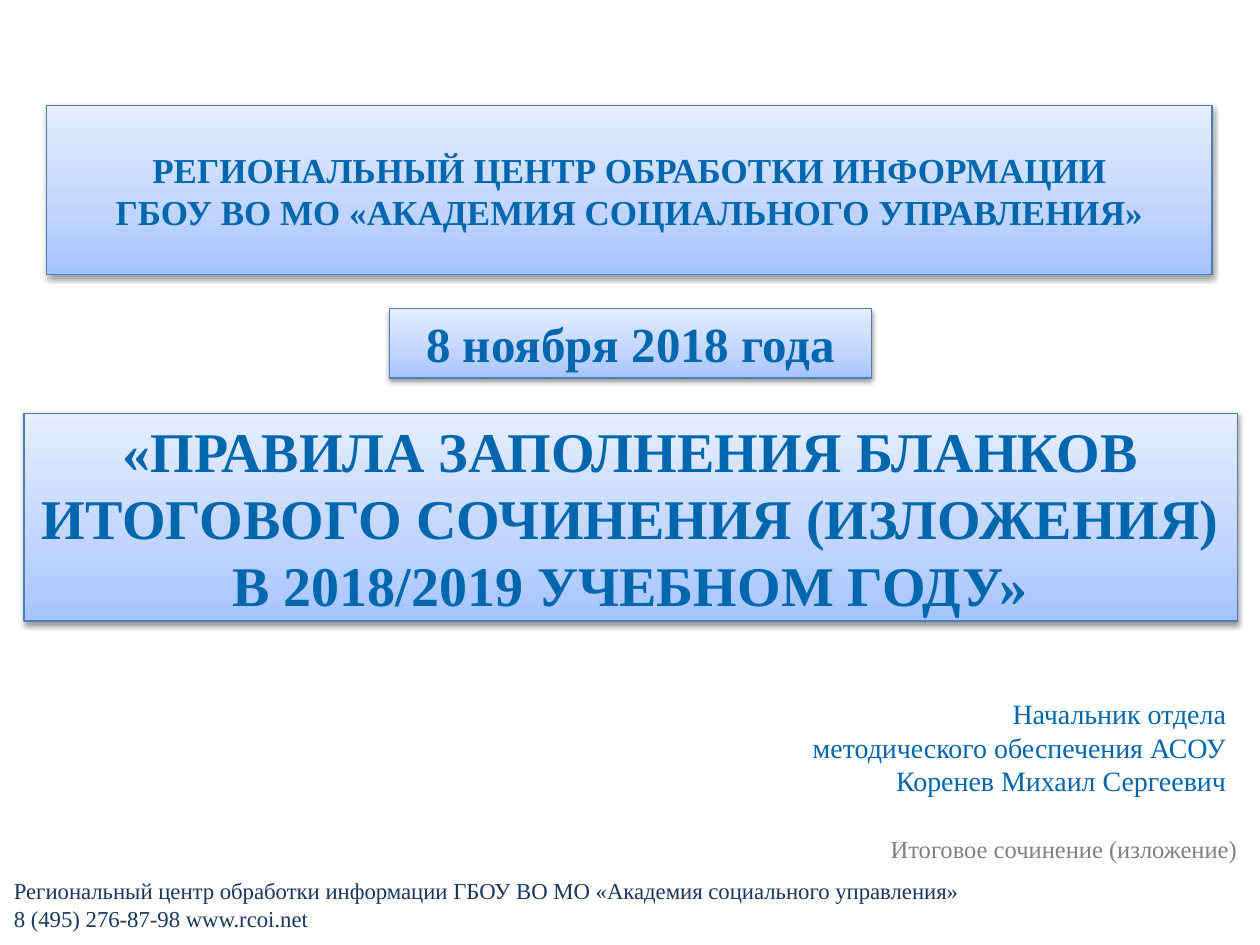
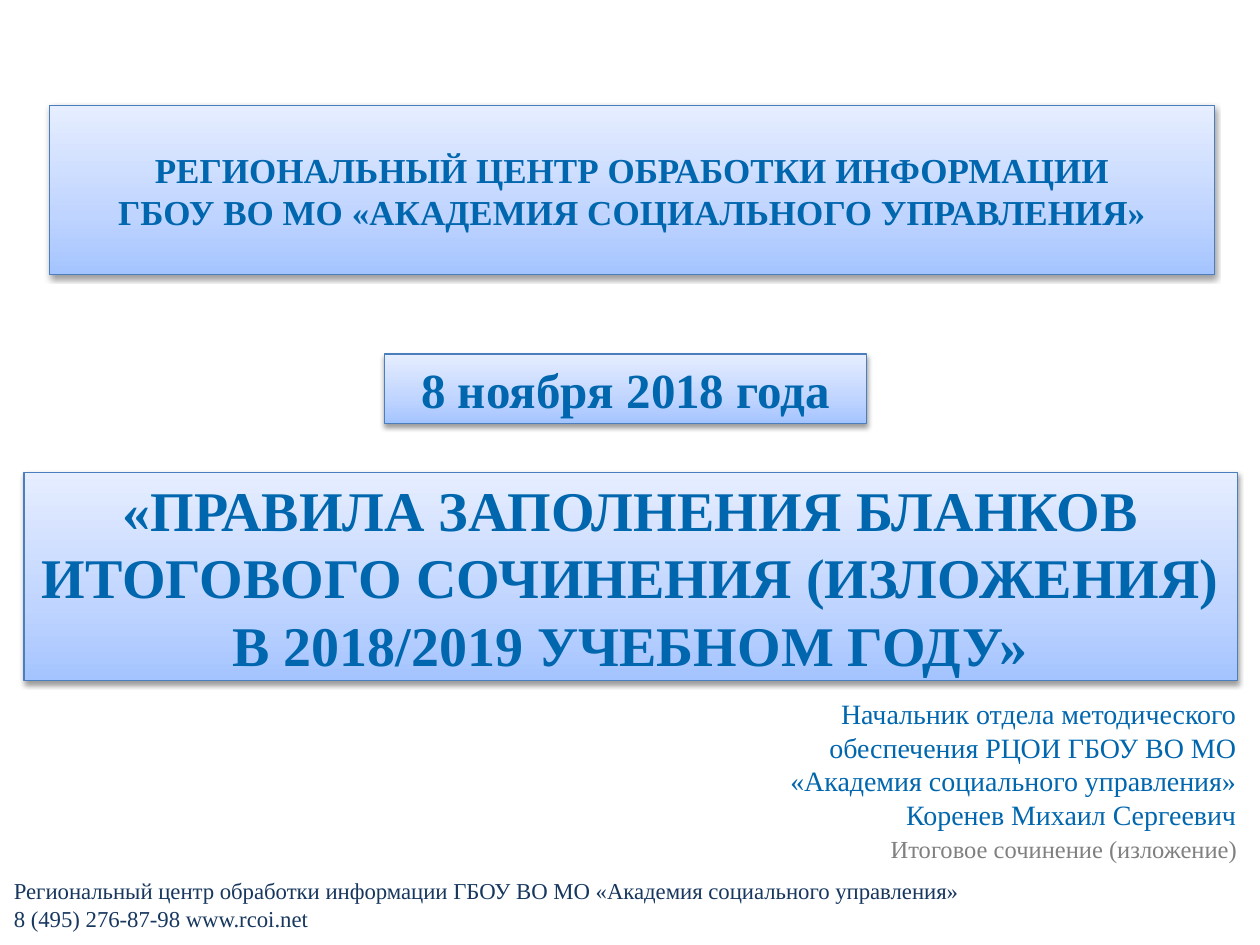
from copy import deepcopy
from dataclasses import dataclass

from lxml import etree
from pptx import Presentation
from pptx.dml.color import RGBColor
from pptx.enum.shapes import MSO_SHAPE
from pptx.enum.text import MSO_ANCHOR, MSO_AUTO_SIZE, PP_ALIGN
from pptx.oxml.ns import qn
from pptx.util import Inches, Pt

LEFT, CENTER, RIGHT = PP_ALIGN.LEFT, PP_ALIGN.CENTER, PP_ALIGN.RIGHT
MIDDLE, TOP = MSO_ANCHOR.MIDDLE, MSO_ANCHOR.TOP
FIXED, GROW = MSO_AUTO_SIZE.NONE, MSO_AUTO_SIZE.SHAPE_TO_FIT_TEXT
RECTANGLE = MSO_SHAPE.RECTANGLE


@dataclass(frozen=True)
class Theme:
    font: str = "Times New Roman"
    blue: str = "0066AE"
    navy: str = "17375E"
    gray: str = "808080"
    border: str = "4B7EBC"
    gradient: tuple = ((0, "A4C4FF"), (0.35, "BFD4FF"), (1, "E6EEFF"))
    title: int = 32
    date: int = 28
    organization: int = 20
    speaker: int = 16
    topic: int = 14
    contacts: int = 13


THEME = Theme()

ORGANIZATION = ("РЕГИОНАЛЬНЫЙ ЦЕНТР ОБРАБОТКИ ИНФОРМАЦИИ\v"
                "ГБОУ ВО МО «АКАДЕМИЯ СОЦИАЛЬНОГО УПРАВЛЕНИЯ»")
DATE = "8 ноября 2018 года"
TITLE = ("«ПРАВИЛА ЗАПОЛНЕНИЯ БЛАНКОВ ИТОГОВОГО СОЧИНЕНИЯ (ИЗЛОЖЕНИЯ) "
         "В 2018/2019 УЧЕБНОМ ГОДУ»")
TOPIC = "Итоговое сочинение (изложение)"
CONTACTS = ("Региональный центр обработки информации ГБОУ ВО МО "
            "«Академия социального управления»\v8 (495) 276-87-98 www.rcoi.net")

# What differs between the slides: panel places and the speaker's signature
COVERS = [
    {"title_top": 3.28, "organization_left": 0.37, "date_at": (3.09, 2.45),
     "speaker_at": (6.28, 5.48, 3.55, 0.91),
     "speaker": "Начальник отдела\vметодического обеспечения АСОУ\n"
                "Коренев Михаил Сергеевич"},
    {"title_top": 3.75, "organization_left": 0.39, "date_at": (3.05, 2.81),
     "speaker_at": (5.39, 5.48, 4.52, 1.18),
     "speaker": "Начальник отдела методического обеспечения РЦОИ ГБОУ ВО МО\n"
                "«Академия социального управления»\n"
                "Коренев Михаил Сергеевич"},
]


def write(shape, text, size, color, align, bold=False):
    frame = shape.text_frame
    frame.word_wrap = True
    frame.text = text
    for paragraph in frame.paragraphs:
        paragraph.alignment = align
        for run in paragraph.runs:
            run.font.name = THEME.font
            run.font.size = Pt(size)
            run.font.bold = bold
            run.font.color.rgb = RGBColor.from_string(color)


def style_panel(panel, text, size):
    # Three-stop gradient running upwards
    panel.fill.gradient()
    panel.fill.gradient_angle = 90
    stop_list = panel.fill._xPr.find(qn("a:gradFill")).find(qn("a:gsLst"))
    stop_list.append(deepcopy(stop_list[-1]))
    for stop, (position, color) in zip(panel.fill.gradient_stops, THEME.gradient):
        stop.position = position
        stop.color.rgb = RGBColor.from_string(color)
    panel.line.color.rgb = RGBColor.from_string(THEME.border)
    panel.line.width = Pt(0.75)

    # Soft shadow below
    panel.shadow.inherit = False
    effects = panel._element.spPr.find(qn("a:effectLst"))
    shadow = etree.SubElement(effects, qn("a:outerShdw"), blurRad="40000",
                              dist="20000", dir="5400000", rotWithShape="0")
    black = etree.SubElement(shadow, qn("a:srgbClr"), val="000000")
    etree.SubElement(black, qn("a:alpha"), val="38000")

    write(panel, text, size, THEME.blue, CENTER, bold=True)
    panel.text_frame.auto_size = FIXED
    panel.text_frame.vertical_anchor = MIDDLE


prs = Presentation()
prs.slide_width, prs.slide_height = Inches(10), Inches(7.5)
title_only = prs.slide_layouts[5]

for cover in COVERS:
    slide = prs.slides.add_slide(title_only)

    # Title panel
    title = slide.shapes.title
    title.left, title.top = Inches(0.19), Inches(cover["title_top"])
    title.width, title.height = Inches(9.63), Inches(1.65)
    style_panel(title, TITLE, THEME.title)

    # Footer and speaker
    captions = [
        ((0, 6.9, 8.61, 0.55), CONTACTS, THEME.contacts, THEME.navy, LEFT),
        ((6.97, 6.57, 2.99, 0.34), TOPIC, THEME.topic, THEME.gray, LEFT),
        (cover["speaker_at"], cover["speaker"], THEME.speaker, THEME.blue, RIGHT),
    ]
    for place, text, size, color, align in captions:
        caption = slide.shapes.add_textbox(*map(Inches, place))
        write(caption, text, size, color, align)
        caption.text_frame.auto_size = GROW
        caption.text_frame.vertical_anchor = TOP
        if text == CONTACTS:
            caption.text_frame.margin_left = caption.text_frame.margin_right = Inches(0.11)
            caption.text_frame.margin_top = caption.text_frame.margin_bottom = Inches(0.06)

    # Organization and date panels
    panels = [
        ((cover["organization_left"], 0.84, 9.25, 1.34), ORGANIZATION, THEME.organization),
        ((*cover["date_at"], 3.83, 0.55), DATE, THEME.date),
    ]
    for place, text, size in panels:
        panel = slide.shapes.add_shape(RECTANGLE, *map(Inches, place))
        style_panel(panel, text, size)

prs.save("out.pptx")
